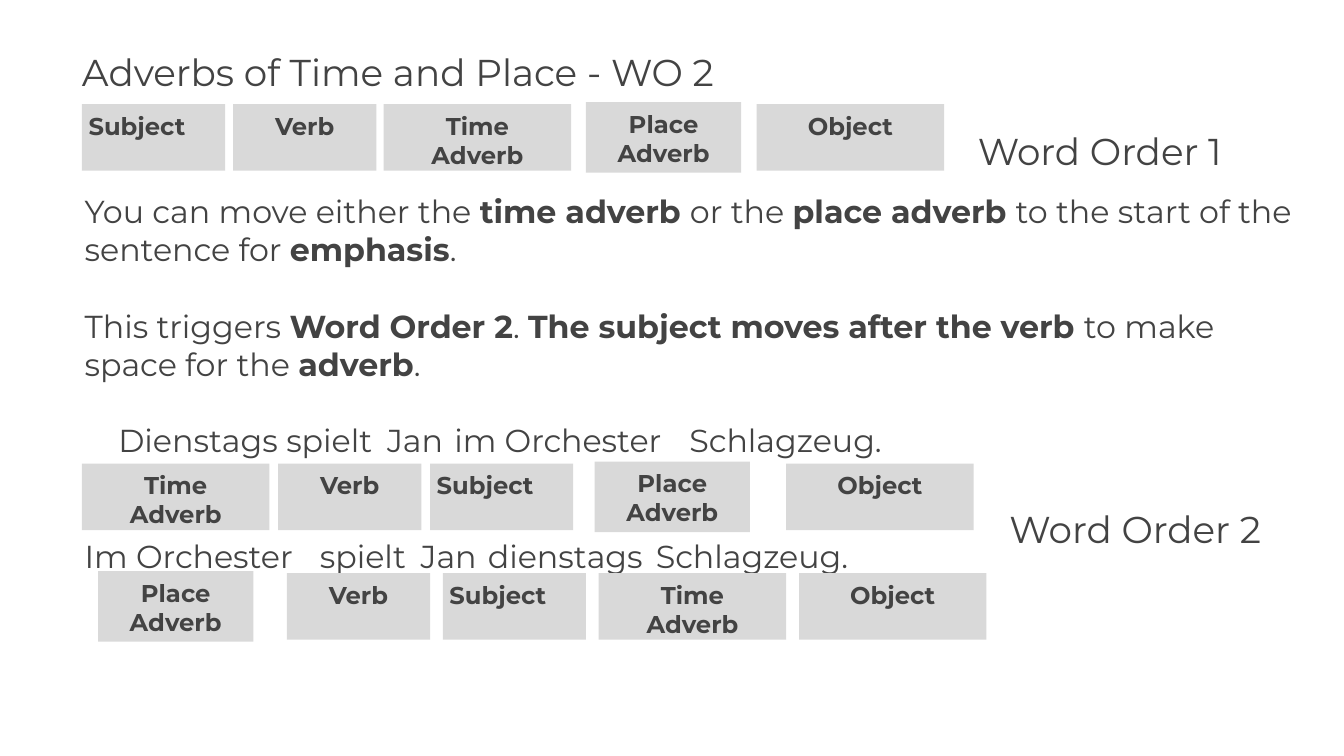
from lxml import etree
from pptx import Presentation
from pptx import util as u
from pptx.dml import color
from pptx.enum import shapes, text
from pptx.oxml import ns

COLORS = {"ink": "434343", "block": "D9D9D9"}
FONT = "Montserrat"
BLANK_LINE = 41.4

WORD_BLOCKS = {
    "Subject": (2.13, 0.99),
    "Verb": (2.13, 0.99),
    "Time\nAdverb": (2.79, 0.99),
    "Place\nAdverb": (2.31, 1.05),
    "Object": (2.79, 0.99),
}

EXPLANATION = [
    (0, [("You can move either the ", False), ("time adverb ", True),
         ("or the ", False), ("place adverb ", True),
         ("to the start of the sentence for ", False), ("emphasis", True), (".", False)]),
    (1, [("This triggers ", False), ("Word Order 2", True), (". ", False),
         ("The subject moves after the verb ", True),
         ("to make space for the ", False), ("adverb", True), (".", False)]),
]
EXAMPLES = [
    (1, "\tDienstags\tspielt\tJan\tim Orchester\tSchlagzeug.", [0.1, 3.34, 5.74, 7.17, 10.39]),
    (2, "Im Orchester\tspielt\tJan\tdienstags\tSchlagzeug.", [3.33, 5.73, 7.66, 10.59]),
]


def rgb(name):
    return color.RGBColor.from_string(COLORS[name])


def style(font, size, bold=False):
    for key, value in {"name": FONT, "size": u.Pt(size), "bold": bold}.items():
        setattr(font, key, value)
    font.color.rgb = rgb("ink")


def set_frame(frame, inset):
    settings = {"word_wrap": True, "auto_size": text.MSO_AUTO_SIZE.NONE,
                "vertical_anchor": text.MSO_ANCHOR.TOP}
    settings.update({f"margin_{side}": u.Inches(inset)
                     for side in ("left", "top", "right", "bottom")})
    for key, value in settings.items():
        setattr(frame, key, value)


def place(shape, box):
    for key, value in zip(("left", "top", "width", "height"), box):
        setattr(shape, key, u.Inches(value))


def heading(shape, box, words):
    place(shape, box)
    set_frame(shape.text_frame, 0)
    line = shape.text_frame.paragraphs[0]
    line.alignment = text.PP_ALIGN.LEFT
    line.line_spacing = 1.15
    run = line.add_run()
    run.text = words
    style(run.font, 40)


def order_label(slide, box, words):
    heading(slide.shapes.add_textbox(*map(u.Inches, box)), box, words)


def word_row(slide, top, blocks):
    for role, left in blocks:
        width, height = WORD_BLOCKS[role]
        raised = (height - 0.99) / 2
        block = slide.shapes.add_shape(
            shapes.MSO_SHAPE.RECTANGLE,
            *map(u.Inches, (left, top - raised, width, height)))
        block.shadow.inherit = False
        block.fill.solid()
        block.fill.fore_color.rgb = rgb("block")
        block.line.fill.background()
        frame = block.text_frame
        set_frame(frame, 0.1)
        frame.text = role
        for line in frame.paragraphs:
            line.alignment = (text.PP_ALIGN.LEFT if role == "Subject"
                              else text.PP_ALIGN.CENTER)
            for run in line.runs:
                style(run.font, 26, True)


def add_paragraph(frame, first, blank_lines, runs, tabs=()):
    line = frame.paragraphs[0] if first else frame.add_paragraph()
    line.space_before = u.Pt(blank_lines * BLANK_LINE)
    line.line_spacing = 1.0
    props = line._p.get_or_add_pPr()
    props.set("marL", "0")
    props.set("indent", "0")
    etree.SubElement(props, ns.qn("a:buNone"))
    if tabs:
        stops = etree.SubElement(props, ns.qn("a:tabLst"))
        for stop in tabs:
            etree.SubElement(stops, ns.qn("a:tab"), pos=str(u.Inches(stop)), algn="l")
    for words, bold in runs:
        run = line.add_run()
        run.text = words
        style(run.font, 34, bold)


def explanation(body, box):
    place(body, box)
    frame = body.text_frame
    set_frame(frame, 0.1)
    for index, (blank_lines, runs) in enumerate(EXPLANATION):
        add_paragraph(frame, index == 0, blank_lines, runs)
    for blank_lines, sentence, tabs in EXAMPLES:
        add_paragraph(frame, False, blank_lines, [(sentence, False)], tabs)


def main():
    deck = Presentation()
    deck.slide_width, deck.slide_height = u.Inches(20), u.Inches(11.25)
    slide = deck.slides.add_slide(deck.slide_layouts[1])
    heading(slide.shapes.title, (1.22, 0.63, 15.26, 1.2),
            "Adverbs of Time and Place - WO 2")
    explanation(slide.placeholders[1], (1.16, 2.75, 18.39, 6.91))

    word_row(slide, 1.55, [("Subject", 1.22), ("Verb", 3.47), ("Time\nAdverb", 5.71),
                           ("Place\nAdverb", 8.72), ("Object", 11.26)])
    order_label(slide, (14.55, 1.81, 4.25, 1.2), "Word Order 1")

    word_row(slide, 6.9, [("Time\nAdverb", 1.22), ("Verb", 4.14), ("Subject", 6.4),
                          ("Place\nAdverb", 8.85), ("Object", 11.7)])
    word_row(slide, 8.53, [("Place\nAdverb", 1.46), ("Verb", 4.27), ("Subject", 6.59),
                           ("Time\nAdverb", 8.91), ("Object", 11.89)])
    order_label(slide, (15.02, 7.44, 3.97, 1.2), "Word Order 2")
    deck.save("out.pptx")


if __name__ == "__main__":
    main()
